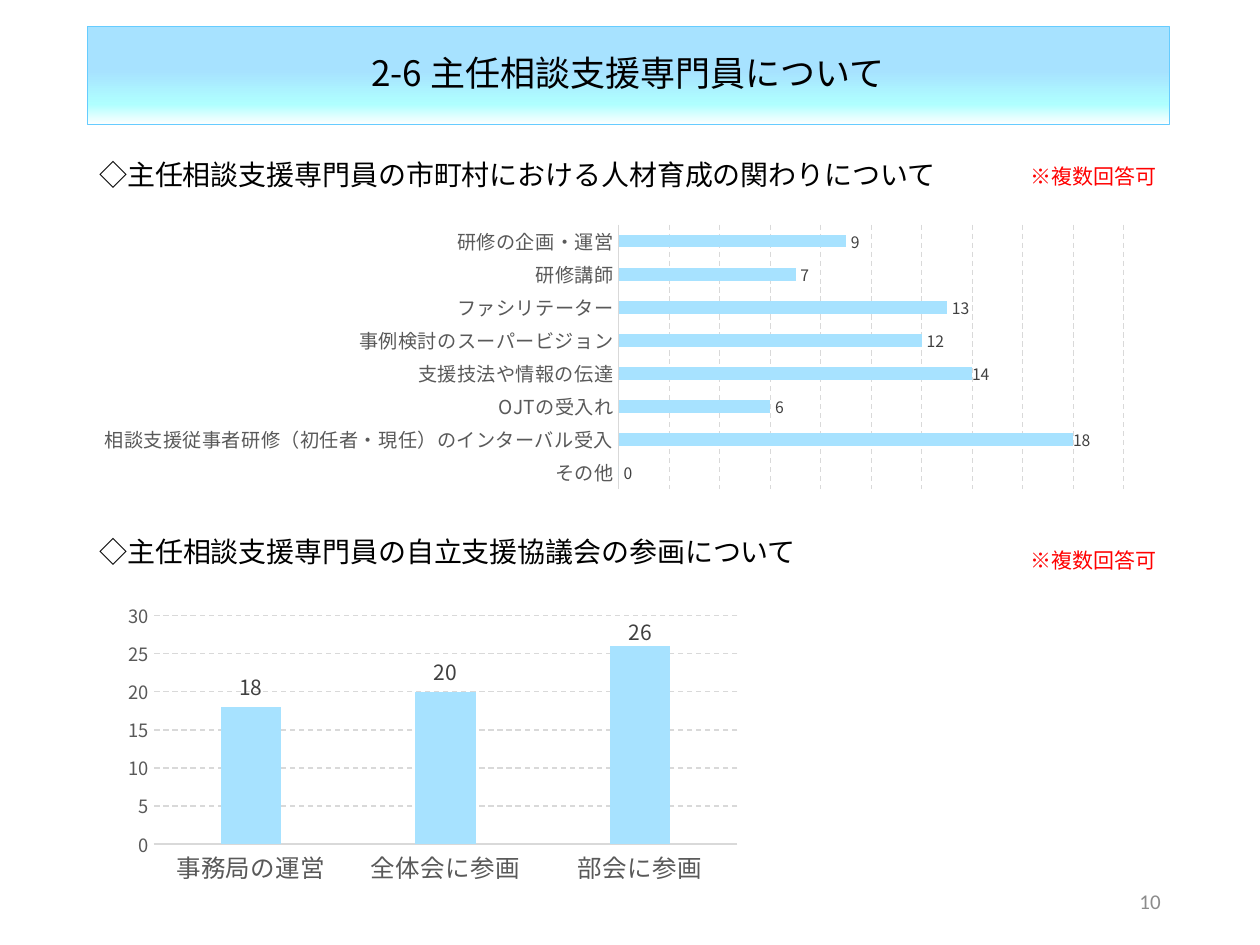
from lxml import etree
from pptx import Presentation
from pptx.chart.data import CategoryChartData
from pptx.dml.color import RGBColor
from pptx.enum import chart as ch, dml, text
from pptx.oxml.ns import qn
from pptx.util import Inches, Pt

SKY = RGBColor(0xA7, 0xE2, 0xFF)
AQUA = RGBColor(0xAF, 0xFF, 0xFF)
WHITE = RGBColor(0xFF, 0xFF, 0xFF)
EDGE = RGBColor(0x66, 0xCC, 0xFF)
BLACK = RGBColor(0x00, 0x00, 0x00)
RED = RGBColor(0xFF, 0x00, 0x00)
GRID = RGBColor(0xD9, 0xD9, 0xD9)
AXIS_TEXT = RGBColor(0x59, 0x59, 0x59)
LABEL_TEXT = RGBColor(0x40, 0x40, 0x40)
PAGE_GREY = RGBColor(0x8C, 0x8C, 0x8C)
CJK = "Noto Sans CJK JP"


def style(font, size, color, face=CJK):
    font.size = Pt(size)
    font.color.rgb = color
    font.name = face
    etree.SubElement(font._rPr, qn("a:ea"), typeface=face)


def manual_layout(**values):
    layout = etree.Element(qn("c:layout"))
    manual = etree.SubElement(layout, qn("c:manualLayout"))
    for tag, value in values.items():
        etree.SubElement(manual, qn(f"c:{tag}"), val=str(value))
    return layout


prs = Presentation()
prs.slide_width, prs.slide_height = Inches(10), Inches(7.5)
slide = prs.slides.add_slide(prs.slide_layouts[5])

title = slide.shapes.title
title.left, title.top = Inches(0.69), Inches(0.21)
title.width, title.height = Inches(8.59), Inches(0.78)
geometry = etree.SubElement(title._element.spPr, qn("a:prstGeom"), prst="roundRect")
adjustments = etree.SubElement(geometry, qn("a:avLst"))
etree.SubElement(adjustments, qn("a:gd"), name="adj", fmla="val 23900")
title.fill.gradient()
title.fill.gradient_angle = 270
stops = title._element.spPr.find(".//" + qn("a:gsLst"))
stops.clear()
for percent, color in [(0, SKY), (45, SKY), (79, AQUA), (100, WHITE)]:
    stop = etree.SubElement(stops, qn("a:gs"), pos=str(percent * 1000))
    etree.SubElement(stop, qn("a:srgbClr"), val=str(color))
title.line.color.rgb = EDGE
title.line.width = Pt(0.25)
title.text_frame.text = "2-6 主任相談支援専門員について"
title.text_frame.auto_size = text.MSO_AUTO_SIZE.NONE
title.text_frame.vertical_anchor = text.MSO_ANCHOR.MIDDLE
heading = title.text_frame.paragraphs[0]
heading.alignment = text.PP_ALIGN.CENTER
heading.line_spacing = 0.9
style(heading.runs[0].font, 20, BLACK)

captions = [
    ("◇主任相談支援専門員の市町村における人材育成の関わりについて", 0.69, 1.2, 7.3, 0.37, 16, BLACK),
    ("◇主任相談支援専門員の自立支援協議会の参画について", 0.69, 4.19, 6.89, 0.37, 16, BLACK),
    ("※複数回答可", 8.08, 1.25, 1.92, 0.3, 12, RED),
    ("※複数回答可", 8.08, 4.3, 1.92, 0.3, 12, RED),
]
for wording, left, top, width, height, size, color in captions:
    caption = slide.shapes.add_textbox(Inches(left), Inches(top), Inches(width), Inches(height))
    caption.text_frame.word_wrap = True
    caption.text_frame.auto_size = text.MSO_AUTO_SIZE.SHAPE_TO_FIT_TEXT
    caption.text_frame.text = wording
    style(caption.text_frame.paragraphs[0].runs[0].font, size, color)

involvement = {
    "研修の企画・運営": 9,
    "研修講師": 7,
    "ファシリテーター": 13,
    "事例検討のスーパービジョン": 12,
    "支援技法や情報の伝達": 14,
    "OJTの受入れ": 6,
    "相談支援従事者研修（初任者・現任）のインターバル受入": 18,
    "その他": 0,
}
council = {"事務局の運営": 18, "全体会に参画": 20, "部会に参画": 26}

surveys = [
    dict(kind=ch.XL_CHART_TYPE.COLUMN_CLUSTERED, answers=council, box=(0.82, 4.39, 5.13, 2.79),
         plot=(0.078, 0.178, 0.903, 0.65), gap=219, overlap=-27, top=30, step=5,
         category_size=14, label_size=12, shifts={2: (0, 0.017)}),
    dict(kind=ch.XL_CHART_TYPE.BAR_CLUSTERED, answers=involvement, box=(0.83, 1.62, 8.22, 2.37),
         plot=(0.494, 0.069, 0.49, 0.885), gap=159, overlap=0, top=20, step=2,
         category_size=11, label_size=9, shifts={4: (-0.005, 0), 6: (-0.005, 0)}),
]
for survey in surveys:
    answers = CategoryChartData()
    answers.categories = survey["answers"].keys()
    answers.add_series("Series 1", survey["answers"].values())
    box = [Inches(length) for length in survey["box"]]
    chart = slide.shapes.add_chart(survey["kind"], *box, answers).chart
    chart.has_title = False
    chart.has_legend = False
    style(chart.font, 10, BLACK)

    plot_area = chart._chartSpace.chart.plotArea
    for automatic in plot_area.findall(qn("c:layout")):
        plot_area.remove(automatic)
    x, y, w, h = survey["plot"]
    plot_area.insert(0, manual_layout(layoutTarget="inner", xMode="edge", yMode="edge",
                                      x=x, y=y, w=w, h=h))

    categories, counts = chart.category_axis, chart.value_axis
    for axis in (categories, counts):
        axis.major_tick_mark = axis.minor_tick_mark = ch.XL_TICK_MARK.NONE
    style(categories.tick_labels.font, survey["category_size"], AXIS_TEXT)
    categories.format.line.color.rgb = GRID
    categories.format.line.width = Pt(0.75)
    counts.minimum_scale, counts.maximum_scale = 0, survey["top"]
    counts.major_unit = survey["step"]
    style(counts.tick_labels.font, 10.5, AXIS_TEXT)
    counts.format.line.fill.background()
    counts.has_major_gridlines = True
    gridline = counts.major_gridlines.format.line
    gridline.color.rgb = GRID
    gridline.width = Pt(0.75)
    gridline.dash_style = dml.MSO_LINE.DASH
    if survey["kind"] == ch.XL_CHART_TYPE.BAR_CLUSTERED:
        categories.reverse_order = True
        counts.visible = False

    bars = chart.plots[0]
    bars.gap_width, bars.overlap = survey["gap"], survey["overlap"]
    bars.vary_by_categories = False
    series = bars.series[0]
    series.format.fill.solid()
    series.format.fill.fore_color.rgb = SKY
    series.data_labels.show_value = True
    series.data_labels.position = ch.XL_LABEL_POSITION.OUTSIDE_END
    style(series.data_labels.font, survey["label_size"], LABEL_TEXT)
    for index in survey["shifts"]:
        label = series.points[index].data_label
        style(label.font, survey["label_size"], LABEL_TEXT)
        label.position = ch.XL_LABEL_POSITION.OUTSIDE_END
    moved = series._element.findall(".//" + qn("c:dLbl"))
    for label, (dx, dy) in zip(moved, survey["shifts"].values()):
        label.insert(1, manual_layout(x=dx, y=dy))

page = slide.shapes.add_textbox(Inches(7.06), Inches(6.95), Inches(2.25), Inches(0.4))
page.text_frame.word_wrap = True
page.text_frame.vertical_anchor = text.MSO_ANCHOR.MIDDLE
page.text_frame.text = "10"
page.text_frame.paragraphs[0].alignment = text.PP_ALIGN.RIGHT
style(page.text_frame.paragraphs[0].runs[0].font, 12, PAGE_GREY, "Calibri")

prs.save("out.pptx")
